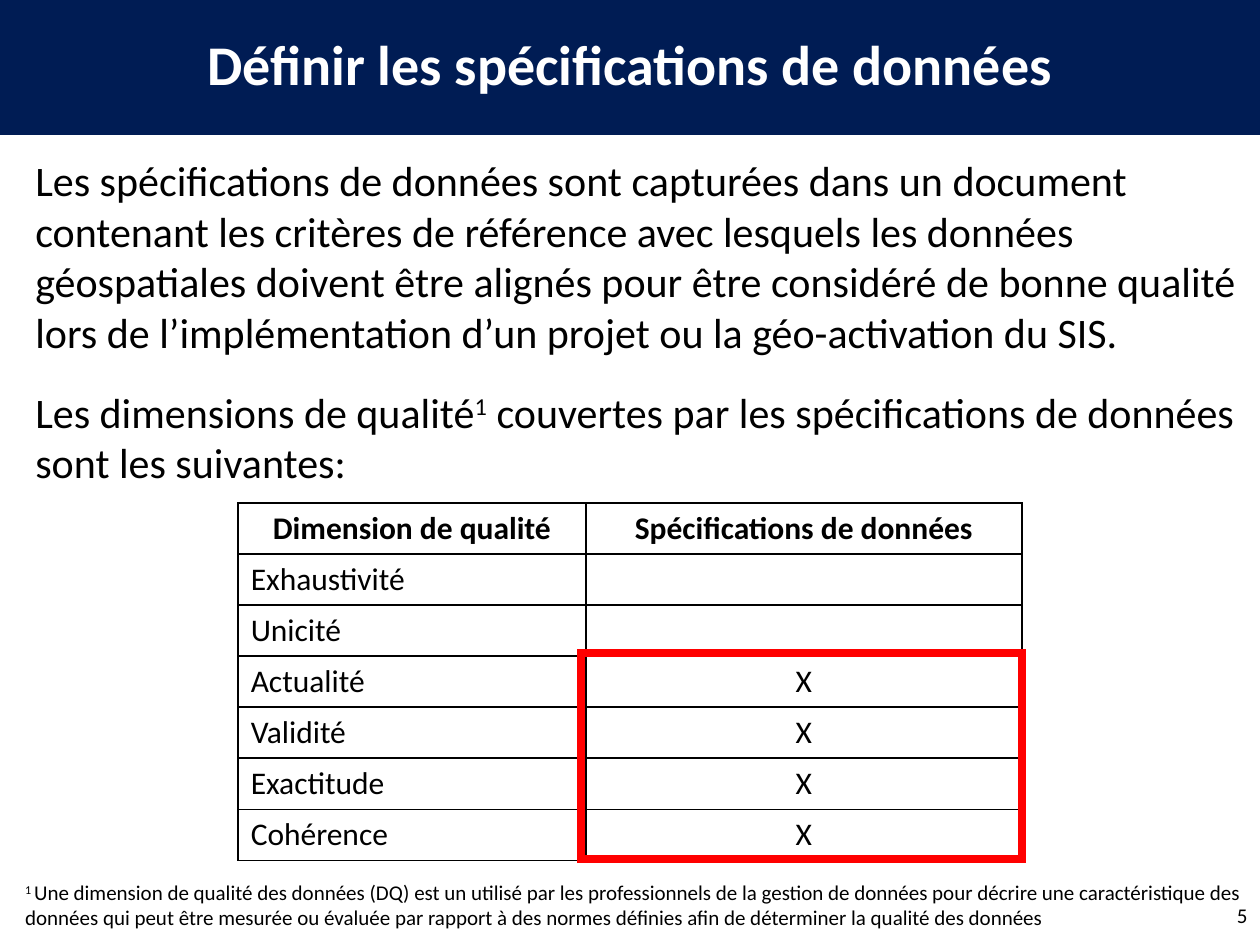
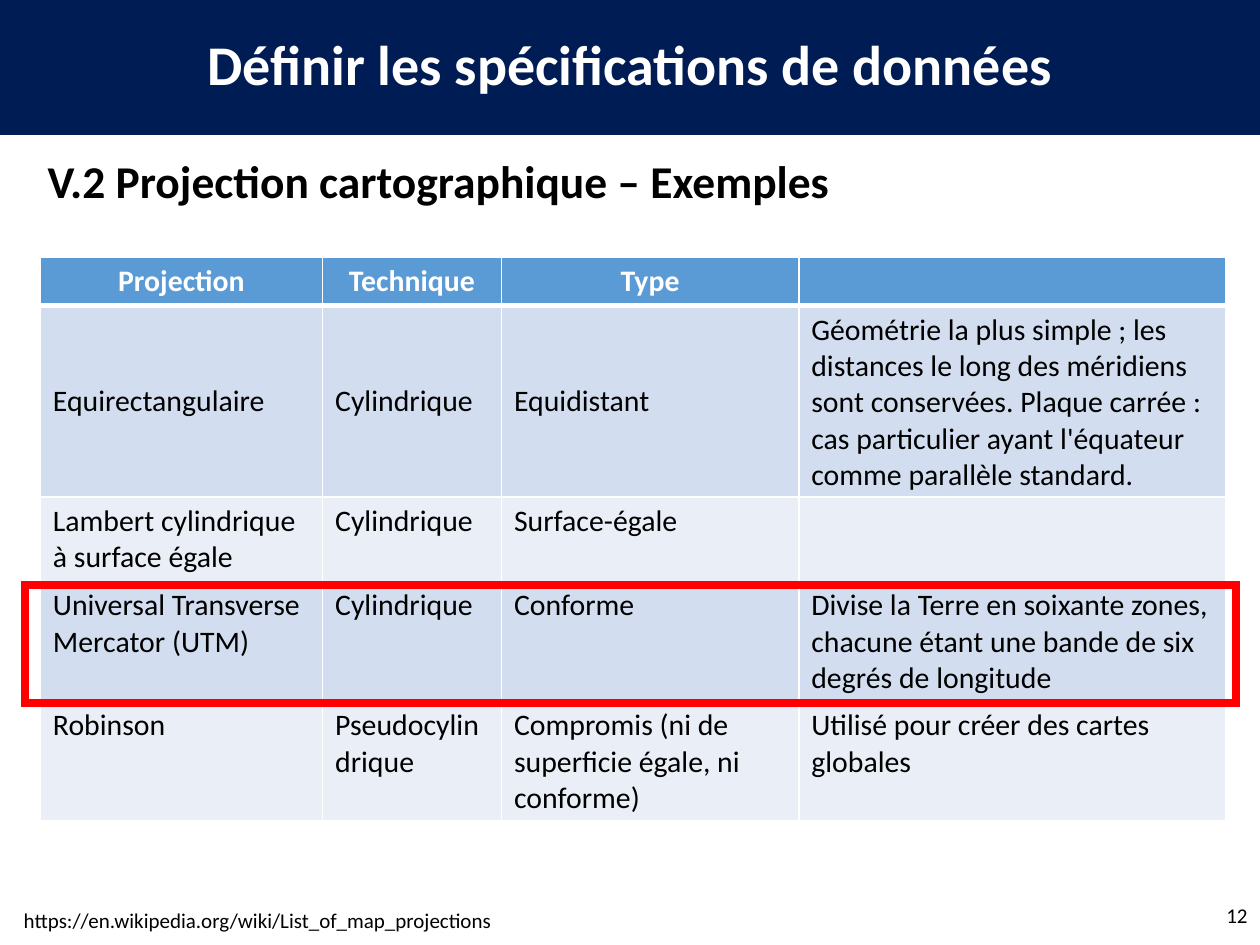
from dataclasses import dataclass

from lxml.etree import SubElement
from pptx import Presentation
from pptx.dml.color import RGBColor
from pptx.enum.shapes import MSO_SHAPE as Shape
from pptx.enum.text import MSO_ANCHOR as Anchor, MSO_AUTO_SIZE as AutoSize, PP_ALIGN as Align
from pptx.oxml.ns import qn
from pptx.util import Inches, Pt


@dataclass(frozen=True)
class Theme:
    """Colours, font and type sizes of the slides."""
    font: str = "Calibri"
    navy: str = "001C54"
    white: str = "FFFFFF"
    black: str = "000000"
    red: str = "FF0000"
    header_blue: str = "5B9BD5"
    band_dark: str = "D2DEEF"
    band_light: str = "EAEFF7"
    title: int = 32
    subtitle: int = 26
    body: int = 24
    quality: int = 18
    projection: int = 17
    small: int = 12
    highlight_line: float = 4.5


THEME = Theme()
TITLE = "Définir les spécifications de données"
TITLE_BOX = (0, 0, 10, 1.07)
MARK = "X"

DEFINITION = [
    "Les spécifications de données sont capturées dans un document contenant les critères de "
    "référence avec lesquels les données géospatiales doivent être alignés pour être considéré "
    "de bonne qualité lors de l’implémentation d’un projet ou la géo-activation du SIS.",
    "Les dimensions de qualité^1^ couvertes par les spécifications de données sont les suivantes:",
]
FOOTNOTE = (
    "^1 ^Une dimension de qualité des données (DQ) est un utilisé par les professionnels de la "
    "gestion de données pour décrire une caractéristique des données qui peut être mesurée ou "
    "évaluée par rapport à des normes définies afin de déterminer la qualité des données"
)
QUALITY_ROWS = [
    ("Dimension de qualité", "Spécifications de données"),
    ("Exhaustivité", ""),
    ("Unicité", ""),
    ("Actualité", MARK),
    ("Validité", MARK),
    ("Exactitude", MARK),
    ("Cohérence", MARK),
]
PROJECTION_ROWS = [
    ("Projection", "Technique", "Type", ""),
    ("Equirectangulaire", "Cylindrique", "Equidistant",
     "Géométrie la plus simple ; les distances le long des méridiens sont conservées. "
     "Plaque carrée : cas particulier ayant l'équateur comme parallèle standard."),
    ("Lambert cylindrique à surface égale", "Cylindrique", "Surface-égale", ""),
    ("Universal Transverse Mercator (UTM)", "Cylindrique", "Conforme",
     "Divise la Terre en soixante zones, chacune étant une bande de six degrés de longitude"),
    ("Robinson", "Pseudocylindrique", "Compromis (ni de superficie égale, ni conforme)",
     "Utilisé pour créer des cartes globales"),
]


def color(value):
    """Return the RGB colour of a hex value."""
    return RGBColor.from_string(value)


def inches(box):
    """Convert left, top, width and height to lengths."""
    return [Inches(value) for value in box]


def paint(target, value):
    """Give a shape or a cell a solid fill."""
    target.fill.solid()
    target.fill.fore_color.rgb = color(value)


def format_runs(paragraph, size, ink=THEME.black, bold=False, align=Align.LEFT):
    """Format a paragraph and all its runs."""
    paragraph.alignment = align
    for run in paragraph.runs:
        run.font.name = THEME.font
        run.font.size = Pt(size)
        run.font.bold = bold
        run.font.color.rgb = color(ink)
    if not paragraph.runs:
        SubElement(paragraph._p, qn("a:endParaRPr"), sz=str(size * 100))


def write_raised(paragraph, text):
    """Write text whose parts between carets are superscript."""
    for index, piece in enumerate(text.split("^")):
        if piece:
            run = paragraph.add_run()
            run.text = piece
            if index % 2:
                run._r.get_or_add_rPr().set("baseline", "30000")


def add_text(slide, box, texts, size, bold=False, align=Align.LEFT, anchor=Anchor.TOP,
             inset=True, gap=0, line_spacing=None):
    """Add a wrapped text box with one paragraph per text."""
    text_frame = slide.shapes.add_textbox(*inches(box)).text_frame
    text_frame.word_wrap = True
    text_frame.vertical_anchor = anchor
    if not inset:
        text_frame.margin_left = text_frame.margin_right = 0
        text_frame.margin_top = text_frame.margin_bottom = 0
    for index, text in enumerate(texts):
        paragraph = text_frame.add_paragraph() if index else text_frame.paragraphs[0]
        write_raised(paragraph, text)
        format_runs(paragraph, size, bold=bold, align=align)
        if index:
            paragraph.space_before = Pt(gap)
        if line_spacing:
            paragraph.line_spacing = line_spacing


def add_slide(presentation, number, number_box):
    """Add a slide with its title band and number."""
    slide = presentation.slides.add_slide(presentation.slide_layouts[5])
    title = slide.shapes.title
    title.left, title.top, title.width, title.height = inches(TITLE_BOX)
    paint(title, THEME.navy)
    text_frame = title.text_frame
    text_frame.text = TITLE
    text_frame.auto_size = AutoSize.NONE
    text_frame.vertical_anchor = Anchor.MIDDLE
    paragraph = text_frame.paragraphs[0]
    format_runs(paragraph, THEME.title, THEME.white, True, Align.CENTER)
    paragraph.line_spacing = 0.9
    add_text(slide, number_box, [str(number)], THEME.small,
             align=Align.RIGHT, anchor=Anchor.MIDDLE)
    return slide


def add_highlight(slide, box):
    """Add a red frame with square corners around table cells."""
    frame = slide.shapes.add_shape(Shape.RECTANGLE, *inches(box))
    frame.shadow.inherit = False
    frame.fill.background()
    frame.line.color.rgb = color(THEME.red)
    frame.line.width = Pt(THEME.highlight_line)
    SubElement(frame.element.spPr.find(qn("a:ln")), qn("a:miter"), lim="800000")


def set_borders(cell, ink, top=1, bottom=1):
    """Draw the four borders of a cell, with widths in points."""
    properties = cell._tc.get_or_add_tcPr()
    for side, width in (("L", 1), ("R", 1), ("T", top), ("B", bottom)):
        line = SubElement(properties, qn(f"a:ln{side}"), w=str(Pt(width)))
        fill = SubElement(line, qn("a:solidFill"))
        SubElement(fill, qn("a:srgbClr"), val=ink)


def add_table(slide, position, widths, heights, rows):
    """Add a table with its texts and yield each cell with its row and column."""
    box = (*position, sum(widths), sum(heights))
    table = slide.shapes.add_table(len(rows), len(widths), *inches(box)).table
    table.first_row = table.horz_banding = False
    for column, width in zip(table.columns, widths):
        column.width = Inches(width)
    for row, height in zip(table.rows, heights):
        row.height = Inches(height)
    for row_index, texts in enumerate(rows):
        for column_index, text in enumerate(texts):
            cell = table.cell(row_index, column_index)
            cell.text_frame.text = text
            yield cell, row_index, column_index


def add_quality_table(slide):
    """Add the ruled table of quality dimensions."""
    count = len(QUALITY_ROWS)
    heights = [2.84 / count] * count
    for cell, row, column in add_table(slide, (1.89, 3.99), (2.76, 3.46), heights, QUALITY_ROWS):
        align = Align.CENTER if row == 0 or column == 1 else Align.LEFT
        format_runs(cell.text_frame.paragraphs[0], THEME.quality, bold=row == 0, align=align)
        set_borders(cell, THEME.black)
        cell.fill.background()


def add_projection_table(slide):
    """Add the banded table of map projections."""
    widths = (2.24, 1.42, 2.36, 3.39)
    heights = (0.38, 1.52, 0.67, 0.95, 0.95)
    bands = (THEME.band_light, THEME.band_dark)
    for cell, row, column in add_table(slide, (0.32, 2.04), widths, heights, PROJECTION_ROWS):
        paragraph = cell.text_frame.paragraphs[0]
        if row == 0:
            format_runs(paragraph, THEME.projection, THEME.white, True, Align.CENTER)
        else:
            format_runs(paragraph, THEME.projection)
        if row == 1 and column < 3:
            cell.vertical_anchor = Anchor.MIDDLE
        set_borders(cell, THEME.white, top=3 if row == 1 else 1, bottom=3 if row == 0 else 1)
        paint(cell, bands[row % 2] if row else THEME.header_blue)


def build_quality_slide(presentation):
    """Build the slide on quality dimensions."""
    slide = add_slide(presentation, 5, (9.33, 7.06, 0.67, 0.4))
    add_quality_table(slide)
    add_highlight(slide, (4.61, 5.18, 3.5, 1.64))
    add_text(slide, (0.28, 1.23, 9.72, 2.7), DEFINITION, THEME.body, inset=False, gap=17)
    add_text(slide, (0.2, 6.98, 9.8, 0.5), [FOOTNOTE], THEME.small, inset=False)


def build_projection_slide(presentation):
    """Build the slide on map projections."""
    slide = add_slide(presentation, 12, (7.75, 7.06, 2.25, 0.4))
    add_text(slide, (0.28, 1.2, 9.14, 0.51), ["V.2 Projection cartographique – Exemples"],
             THEME.subtitle, bold=True, anchor=Anchor.MIDDLE, line_spacing=0.9)
    add_text(slide, (0.09, 7.15, 7.9, 0.3),
             ["https://en.wikipedia.org/wiki/List_of_map_projections"], THEME.small)
    add_projection_table(slide)
    add_highlight(slide, (0.2, 4.64, 9.61, 0.94))


def main():
    """Build and save the presentation."""
    presentation = Presentation()
    presentation.slide_width = Inches(10)
    presentation.slide_height = Inches(7.5)
    build_quality_slide(presentation)
    build_projection_slide(presentation)
    presentation.save("out.pptx")


if __name__ == "__main__":
    main()
